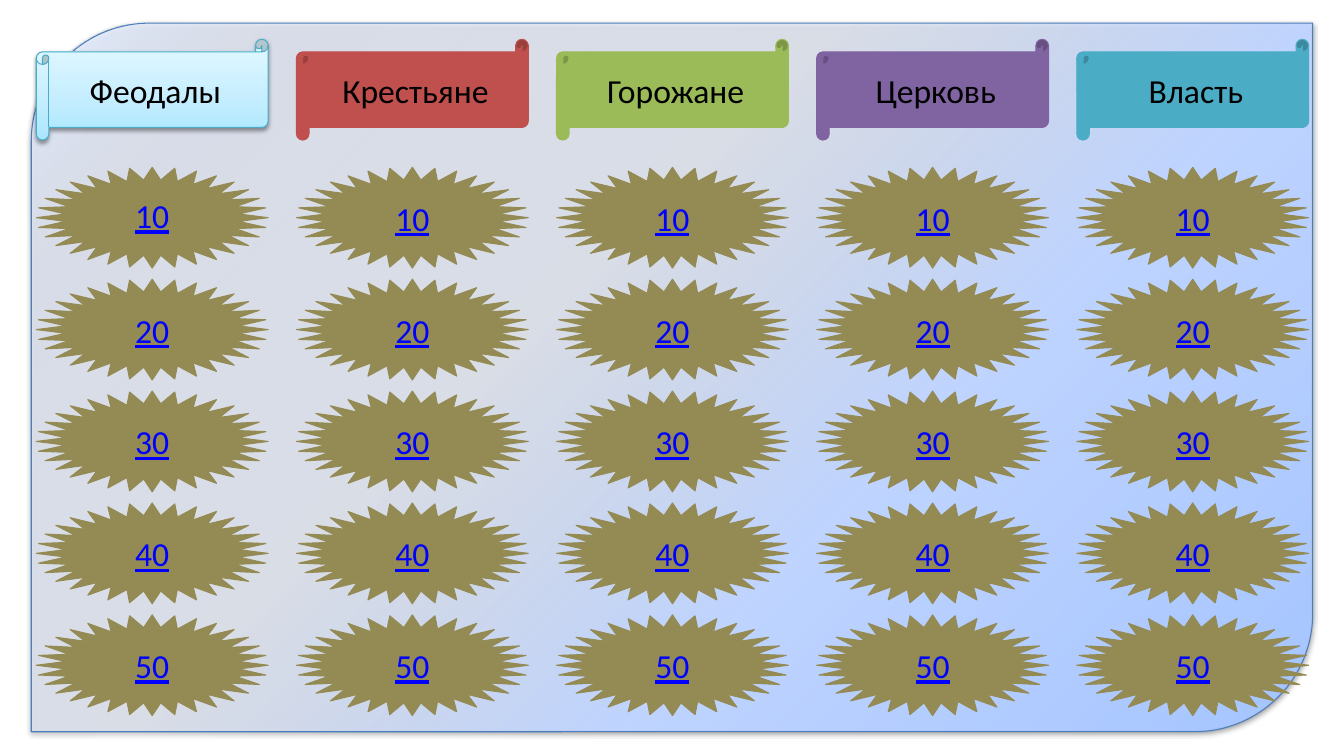
from lxml.etree import SubElement
from pptx import Presentation
from pptx.dml.color import RGBColor
from pptx.enum.shapes import MSO_SHAPE
from pptx.enum.text import MSO_ANCHOR, PP_ALIGN
from pptx.oxml.ns import qn
from pptx.util import Inches, Pt

TOPICS = [
    ("Феодалы", "4BACC6"),
    ("Крестьяне", "C0504D"),
    ("Горожане", "9BBB59"),
    ("Церковь", "8064A2"),
    ("Власть", "4BACC6"),
]
POINTS = [10, 20, 30, 40, 50]
STAR_COLOR = "948A54"
LINK_COLOR = "0000FF"
LEFT, COLUMN_STEP = 0.36, 2.58
HEADER_TOP, STAR_TOP, ROW_STEP = 0.39, 1.66, 1.11
CELL_W, CELL_H = 2.3, 1

# Gradient stops: position %, colour, opacity %
PANEL_STOPS = [(0, "A4C4FF", 100), (35, "BFD4FF", 100), (59, "E6EEFF", 57),
               (88, "E6EEFF", 62), (100, "E6EEFF", 100)]
SCROLL_STOPS = [(0, "A8E6FF", 100), (35, "C2EDFF", 100), (100, "E3F8FF", 100)]


def rgb(color):
    return RGBColor.from_string(color)


def add_box(s, kind, x, y, w, h, fill, line):
    sp = s.shapes.add_shape(kind, Inches(x), Inches(y), Inches(w), Inches(h))
    sp.shadow.inherit = False
    sp.fill.solid()
    sp.fill.fore_color.rgb = rgb(fill)
    sp.line.color.rgb = rgb(line)
    sp.line.width = Pt(0.75)
    return sp


def add_color(parent, color, opacity):
    clr = SubElement(parent, qn("a:srgbClr"), val=color)
    if opacity < 100:
        SubElement(clr, qn("a:alpha"), val=str(opacity * 1000))


def set_gradient(sp, stops, radial=False):
    sp.fill.gradient()
    grad = sp._element.spPr.find(qn("a:gradFill"))
    for child in list(grad):
        grad.remove(child)
    gs_list = SubElement(grad, qn("a:gsLst"))
    for pos, color, opacity in stops:
        add_color(SubElement(gs_list, qn("a:gs"), pos=str(pos * 1000)), color, opacity)
    if radial:
        focus = SubElement(grad, qn("a:path"), {"path": "circle"})
        SubElement(focus, qn("a:fillToRect"), l="100000", t="100000")
    else:
        SubElement(grad, qn("a:lin"), ang="16200000", scaled="1")


def set_shadow(sp):
    effects = sp._element.spPr.find(qn("a:effectLst"))
    shadow = SubElement(effects, qn("a:outerShdw"), blurRad=str(Pt(3.1)),
                        dist=str(Pt(1.6)), dir="5400000", rotWithShape="0")
    add_color(shadow, "000000", 38)


def add_label(sp, text, color, underline=False):
    tf = sp.text_frame
    tf.word_wrap = True
    tf.vertical_anchor = MSO_ANCHOR.MIDDLE
    p = tf.paragraphs[0]
    p.alignment = PP_ALIGN.CENTER
    r = p.add_run()
    r.text = text
    r.font.name = "Calibri"
    r.font.size = Pt(24)
    r.font.color.rgb = rgb(color)
    r.font.underline = underline
    return p


def add_panel(s):
    sp = add_box(s, MSO_SHAPE.ROUND_2_DIAG_RECTANGLE, 0.31, 0.23, 12.71, 7.03,
                 "BFD4FF", "4B7EBC")
    set_gradient(sp, PANEL_STOPS, radial=True)
    set_shadow(sp)


def add_header(s, x, topic, color):
    sp = add_box(s, MSO_SHAPE.HORIZONTAL_SCROLL, x, HEADER_TOP, CELL_W, CELL_H,
                 color, color)
    add_label(sp, topic, "000000")
    return sp


def add_star(s, x, y, points):
    sp = add_box(s, MSO_SHAPE.STAR_32_POINT, x, y, CELL_W, CELL_H,
                 STAR_COLOR, STAR_COLOR)
    return add_label(sp, str(points), LINK_COLOR, underline=True)


def main():
    prs = Presentation()
    prs.slide_width, prs.slide_height = Inches(13.33), Inches(7.5)
    s = prs.slides.add_slide(prs.slide_layouts[6])

    # Background panel
    add_panel(s)

    # One column per topic: scroll header, then stars with points
    for col, (topic, color) in enumerate(TOPICS):
        x = LEFT + col * COLUMN_STEP
        header = add_header(s, x, topic, color)
        if col == 0:
            set_gradient(header, SCROLL_STOPS)
            set_shadow(header)
        for row, points in enumerate(POINTS):
            p = add_star(s, x, STAR_TOP + row * ROW_STEP, points)
            if col == row == 0:
                p.line_spacing = 0.9

    prs.save("out.pptx")


if __name__ == "__main__":
    main()
